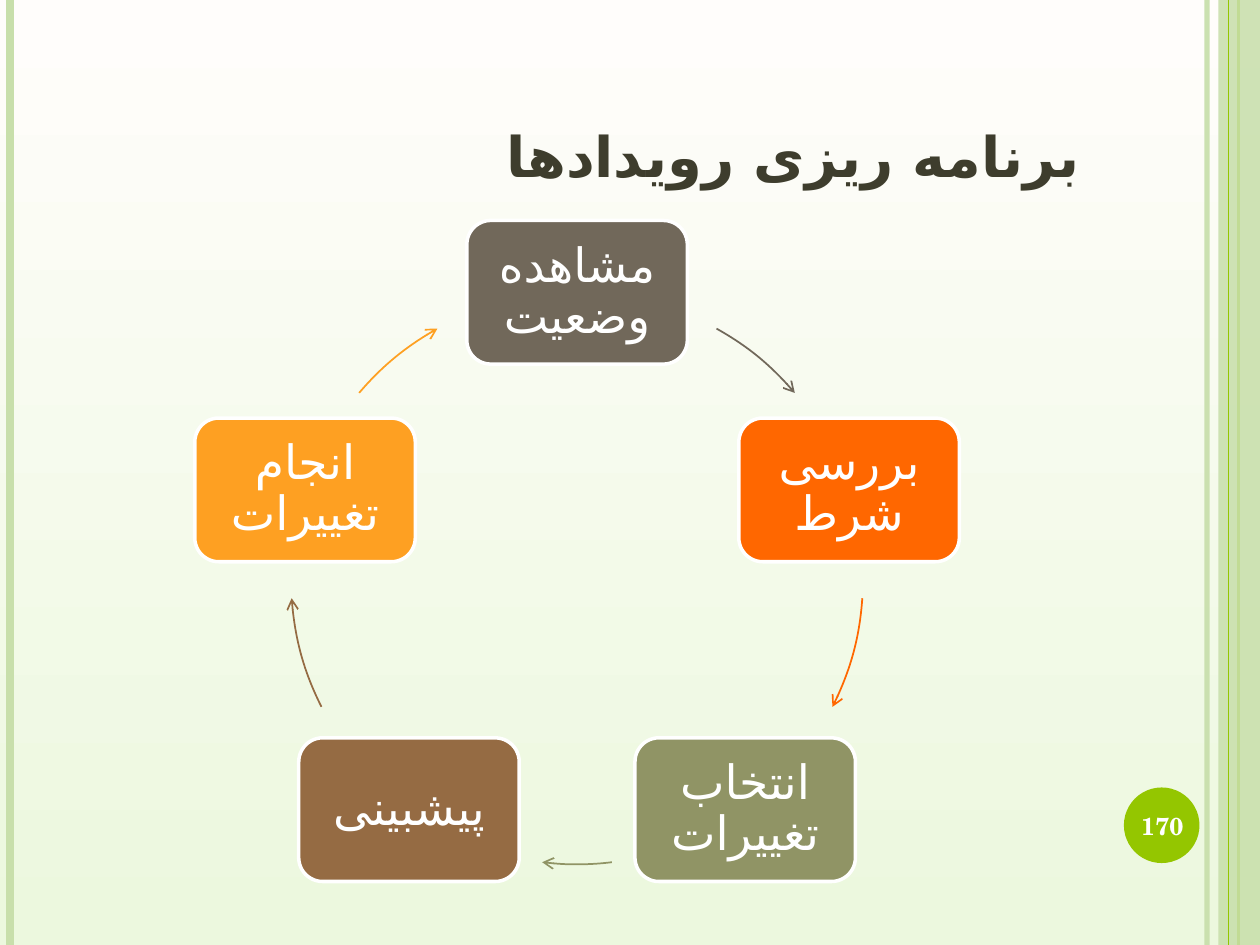
from math import cos, radians, sin

from pptx import Presentation
from pptx.dml.color import RGBColor
from pptx.enum.shapes import MSO_CONNECTOR, MSO_SHAPE
from pptx.enum.text import MSO_ANCHOR, PP_ALIGN
from pptx.oxml.ns import qn
from pptx.util import Inches, Pt
from lxml.etree import SubElement

WHITE = RGBColor(0xFF, 0xFF, 0xFF)
CREAM = RGBColor(0xFF, 0xFD, 0xFB)
MINT = RGBColor(0xEC, 0xF8, 0xDE)
PALE_GREEN = RGBColor(0xC8, 0xDF, 0xAB)
GREEN = RGBColor(0x94, 0xC6, 0x00)
DARK_OLIVE = RGBColor(0x3E, 0x3D, 0x2D)
TAUPE = RGBColor(0x71, 0x68, 0x5A)
ORANGE = RGBColor(0xFF, 0x67, 0x00)
OLIVE = RGBColor(0x90, 0x94, 0x65)
BROWN = RGBColor(0x95, 0x6B, 0x43)
AMBER = RGBColor(0xFE, 0xA0, 0x22)

TITLE_FONT = "Roboto"
BODY_FONT = "TeX Gyre Schola"
PERSIAN_FONT = "DejaVu Sans"

CENTER_X, CENTER_Y, RADIUS = 4.58, 4.59, 2.27
NODE_WIDTH, NODE_HEIGHT = 1.75, 1.14
LABEL_WIDTH, LABEL_HEIGHT = 1.64, 1.03

STEPS = [
    ("مشاهده وضعیت", TAUPE, 29.2, 49.6),
    ("بررسی شرط", ORANGE, 94, 116.7),
    ("انتخاب تغییرات", OLIVE, 173, 187),
    ("پیشبینی", BROWN, 243.3, 266),
    ("انجام تغییرات", AMBER, 310.4, 330.8),
]


def set_background(slide):
    fill = slide.background.fill
    fill.gradient()
    fill.gradient_angle = 270
    for stop, color, position in zip(fill.gradient_stops, (CREAM, MINT), (0, 1)):
        stop.color.rgb = color
        stop.position = position


def set_opacity(shape, percent):
    color = next(shape._element.spPr.iter(qn("a:srgbClr")))
    SubElement(color, qn("a:alpha"), val=str(percent * 1000))


def add_stripe(slide, x, color, width):
    stripe = slide.shapes.add_connector(
        MSO_CONNECTOR.STRAIGHT, Inches(x), 0, Inches(x), Inches(7.5)
    )
    stripe.line.color.rgb = color
    stripe.line.width = Pt(width)
    SubElement(stripe._element.spPr, qn("a:effectLst"))
    return stripe


def add_filled(slide, preset, left, top, width, height, color, outline=None):
    shape = slide.shapes.add_shape(
        preset, Inches(left), Inches(top), Inches(width), Inches(height)
    )
    shape.shadow.inherit = False
    shape.fill.solid()
    shape.fill.fore_color.rgb = color
    if outline is None:
        shape.line.fill.background()
    else:
        shape.line.color.rgb = outline
        shape.line.width = Pt(2)
    return shape


def add_text(slide, text, left, top, width, height, *, size, color,
             font=BODY_FONT, bold=False, align=PP_ALIGN.CENTER,
             anchor=MSO_ANCHOR.MIDDLE, inset=None, spacing=None,
             right_to_left=False, small_caps=False):
    box = slide.shapes.add_textbox(
        Inches(left), Inches(top), Inches(width), Inches(height)
    )
    frame = box.text_frame
    frame.word_wrap = True
    frame.vertical_anchor = anchor
    if inset is not None:
        frame.margin_left = frame.margin_right = Inches(inset)
        frame.margin_top = frame.margin_bottom = Inches(inset)
    paragraph = frame.paragraphs[0]
    paragraph.alignment = align
    if spacing is not None:
        paragraph.line_spacing = spacing
    if right_to_left:
        paragraph._p.get_or_add_pPr().set("rtl", "1")
    run = paragraph.add_run()
    run.text = text
    run.font.name = font
    run.font.size = Pt(size)
    run.font.bold = bold
    run.font.color.rgb = color
    properties = run._r.get_or_add_rPr()
    SubElement(properties, qn("a:cs"), typeface=PERSIAN_FONT)
    if small_caps:
        properties.set("cap", "small")


def add_node(slide, text, color, angle):
    x = CENTER_X + RADIUS * sin(radians(angle))
    y = CENTER_Y - RADIUS * cos(radians(angle))
    add_filled(slide, MSO_SHAPE.ROUNDED_RECTANGLE, x - NODE_WIDTH / 2,
               y - NODE_HEIGHT / 2, NODE_WIDTH, NODE_HEIGHT, color, WHITE)
    add_text(slide, text, x - LABEL_WIDTH / 2, y - LABEL_HEIGHT / 2,
             LABEL_WIDTH, LABEL_HEIGHT, size=27, color=WHITE,
             inset=0.11, spacing=0.9)


def add_arc_arrow(slide, color, start, end):
    arc = slide.shapes.add_shape(
        MSO_SHAPE.ARC, Inches(CENTER_X - RADIUS), Inches(CENTER_Y - RADIUS),
        Inches(2 * RADIUS), Inches(2 * RADIUS)
    )
    arc.shadow.inherit = False
    arc.fill.background()
    for index, angle in enumerate((start, end)):
        arc.adjustments[index] = (angle - 90) % 360 * 0.6
    arc.line.color.rgb = color
    arc.line.width = Pt(1)
    SubElement(arc.line._get_or_add_ln(), qn("a:tailEnd"), type="arrow")


def add_frame(slide):
    set_opacity(add_stripe(slide, 9.58, PALE_GREEN, 3), 93)
    add_stripe(slide, 0.08, PALE_GREEN, 4.5)
    add_stripe(slide, 9.83, GREEN, 1.5)
    band = add_filled(slide, MSO_SHAPE.RECTANGLE, 9.67, 0, 0.33, 7.5, PALE_GREEN)
    set_opacity(band, 87)
    add_stripe(slide, 9.75, GREEN, 0.75)
    add_filled(slide, MSO_SHAPE.OVAL, 8.92, 6.25, 0.6, 0.6, GREEN)


def main():
    presentation = Presentation()
    presentation.slide_width = Inches(10)
    presentation.slide_height = Inches(7.5)
    slide = presentation.slides.add_slide(presentation.slide_layouts[6])
    set_background(slide)
    add_frame(slide)
    add_text(slide, "برنامه ریزی رویدادها", 0.5, 0.3, 8.17, 1.25, size=32,
             color=DARK_OLIVE, font=TITLE_FONT, bold=True,
             align=PP_ALIGN.RIGHT, anchor=MSO_ANCHOR.BOTTOM,
             right_to_left=True, small_caps=True)
    for index, (text, color, start, end) in enumerate(STEPS):
        add_node(slide, text, color, index * 360 / len(STEPS))
        add_arc_arrow(slide, color, start, end)
    add_text(slide, "170", 8.89, 6.27, 0.67, 0.57, size=14, color=WHITE, bold=True)
    presentation.save("out.pptx")


if __name__ == "__main__":
    main()
